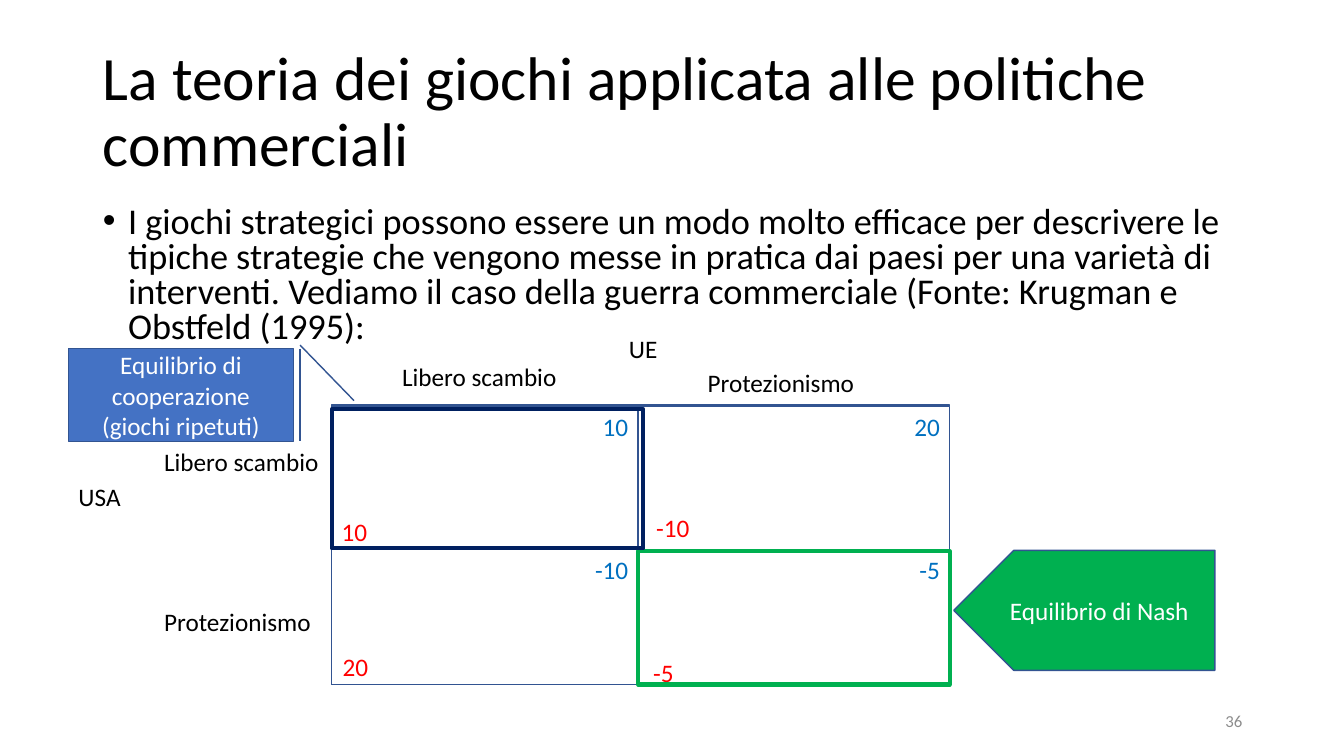
"""Build a slide with the payoff matrix of a trade policy game."""
from pptx import Presentation
from pptx.dml.color import RGBColor
from pptx.enum.shapes import MSO_SHAPE
from pptx.enum.text import MSO_ANCHOR, MSO_AUTO_SIZE, PP_ALIGN
from pptx.util import Inches, Pt

RECT = MSO_SHAPE.RECTANGLE
PENTAGON = MSO_SHAPE.PENTAGON
CALLOUT = MSO_SHAPE.LINE_CALLOUT_1_BORDER_AND_ACCENT_BAR
LEFT, CENTER, RIGHT = PP_ALIGN.LEFT, PP_ALIGN.CENTER, PP_ALIGN.RIGHT
TOP, MIDDLE = MSO_ANCHOR.TOP, MSO_ANCHOR.MIDDLE
NO_AUTOFIT = MSO_AUTO_SIZE.NONE

FONT = "Calibri"
BLACK = RGBColor(0x00, 0x00, 0x00)
WHITE = RGBColor(0xFF, 0xFF, 0xFF)
GRAY = RGBColor(0x8C, 0x8C, 0x8C)
BLUE = RGBColor(0x44, 0x72, 0xC4)
OUTLINE = RGBColor(0x32, 0x54, 0x91)
NAVY = RGBColor(0x00, 0x20, 0x60)
GREEN = RGBColor(0x00, 0xB0, 0x50)
EU_BLUE = RGBColor(0x00, 0x70, 0xC0)
USA_RED = RGBColor(0xFF, 0x00, 0x00)

TITLE = "La teoria dei giochi applicata alle politiche commerciali"
BODY = (
    "I giochi strategici possono essere un modo molto efficace per descrivere "
    "le tipiche strategie che vengono messe in pratica dai paesi per una varietà "
    "di interventi. Vediamo il caso della guerra commerciale (Fonte: Krugman e "
    "Obstfeld (1995):"
)

COLUMNS = [(3.29, 3.04), (6.33, 3.09)]
ROWS = [(4.03, 1.42), (5.45, 1.34)]
EU_PAYOFFS = [["10", "20"], ["-10", "-5"]]
LABELS = [
    ("UE", 6.14, 3.26, 0.63),
    ("USA", 0.68, 4.73, 0.72),
    ("Libero scambio", 3.89, 3.54, 2.36),
    ("Libero scambio", 1.53, 4.38, 2.36),
    ("Protezionismo", 6.92, 3.59, 1.91),
    ("Protezionismo", 1.53, 5.97, 1.91),
]
USA_PAYOFFS = [
    ("10", 3.29, 5.07),
    ("-10", 6.41, 5.03),
    ("20", 3.3, 6.41),
    ("-5", 6.38, 6.47),
]


def box(left, top, width, height):
    """Return a position and size in slide units."""
    return Inches(left), Inches(top), Inches(width), Inches(height)


def write(sp, text, size=18, color=BLACK, align=LEFT, anchor=TOP, spacing=None):
    """Put formatted text in a shape and return its paragraph."""
    tf = sp.text_frame
    tf.word_wrap = True
    tf.auto_size = NO_AUTOFIT
    tf.vertical_anchor = anchor
    p = tf.paragraphs[0]
    p.alignment = align
    p.line_spacing = spacing
    r = p.add_run()
    r.text = text
    r.font.name = FONT
    r.font.size = Pt(size)
    r.font.color.rgb = color
    return p


def fill_placeholder(sp, bounds, text, **style):
    """Move a placeholder, fill it and return its paragraph."""
    sp.left, sp.top, sp.width, sp.height = bounds
    return write(sp, text, **style)


def add_label(s, text, bounds, **style):
    """Add a text box."""
    write(s.shapes.add_textbox(*bounds), text, **style)


def add_figure(s, kind, bounds, fill=None, line=OUTLINE, weight=1):
    """Add a preset shape, left unfilled when no fill is given."""
    sp = s.shapes.add_shape(kind, *bounds)
    sp.shadow.inherit = False
    if fill is None:
        sp.fill.background()
    else:
        sp.fill.solid()
        sp.fill.fore_color.rgb = fill
    sp.line.color.rgb = line
    sp.line.width = Pt(weight)
    return sp


def add_matrix(s):
    """Add the payoff matrix with its labels."""
    add_figure(s, RECT, box(3.29, 4.02, 6.13, 2.77), fill=BLUE)
    for (top, height), payoffs in zip(ROWS, EU_PAYOFFS):
        for (left, width), payoff in zip(COLUMNS, payoffs):
            cell = add_figure(s, RECT, box(left, top, width, height), fill=WHITE)
            write(cell, payoff, color=EU_BLUE, align=RIGHT)
    for text, left, top, width in LABELS:
        add_label(s, text, box(left, top, width, 0.4))
    for text, left, top in USA_PAYOFFS:
        add_label(s, text, box(left, top, 0.77, 0.4), color=USA_RED)


def add_equilibria(s):
    """Frame and name the Nash and the cooperative equilibrium."""
    add_figure(s, RECT, box(6.33, 5.47, 3.09, 1.32), line=GREEN, weight=3)
    nash = add_figure(s, PENTAGON, box(9.46, 5.46, 2.59, 1.19), fill=GREEN)
    nash._element.spPr.xfrm.set("flipH", "1")
    write(nash, "Equilibrio di Nash", color=WHITE, align=CENTER, anchor=MIDDLE)

    add_figure(s, RECT, box(3.29, 4.06, 3.09, 1.38), line=NAVY, weight=3)
    callout = add_figure(s, CALLOUT, box(0.68, 3.46, 2.23, 0.92), fill=BLUE)
    for i, value in enumerate((-0.04, 1.03, 0.56, 1.27)):
        callout.adjustments[i] = value
    write(callout, "Equilibrio di cooperazione (giochi ripetuti)",
          color=WHITE, align=CENTER, anchor=MIDDLE)


def main():
    """Build and save the slide."""
    prs = Presentation()
    prs.slide_width, prs.slide_height = Inches(13.33), Inches(7.5)
    s = prs.slides.add_slide(prs.slide_layouts[1])

    fill_placeholder(s.shapes.title, box(0.92, 0.4, 11.5, 1.45), TITLE,
                     size=44, anchor=MIDDLE, spacing=0.9)
    p = fill_placeholder(s.placeholders[1], box(0.92, 2, 11.5, 1.52), BODY,
                         size=25.9, spacing=0.8)
    p.space_before = Pt(10)
    pPr = p._p.get_or_add_pPr()
    pPr.set("marL", str(Inches(0.25)))
    pPr.set("indent", str(Inches(-0.25)))

    add_label(s, "36", box(9.42, 6.95, 3, 0.4),
              size=12, color=GRAY, align=RIGHT, anchor=MIDDLE)
    add_matrix(s)
    add_equilibria(s)
    prs.save("out.pptx")


if __name__ == "__main__":
    main()
